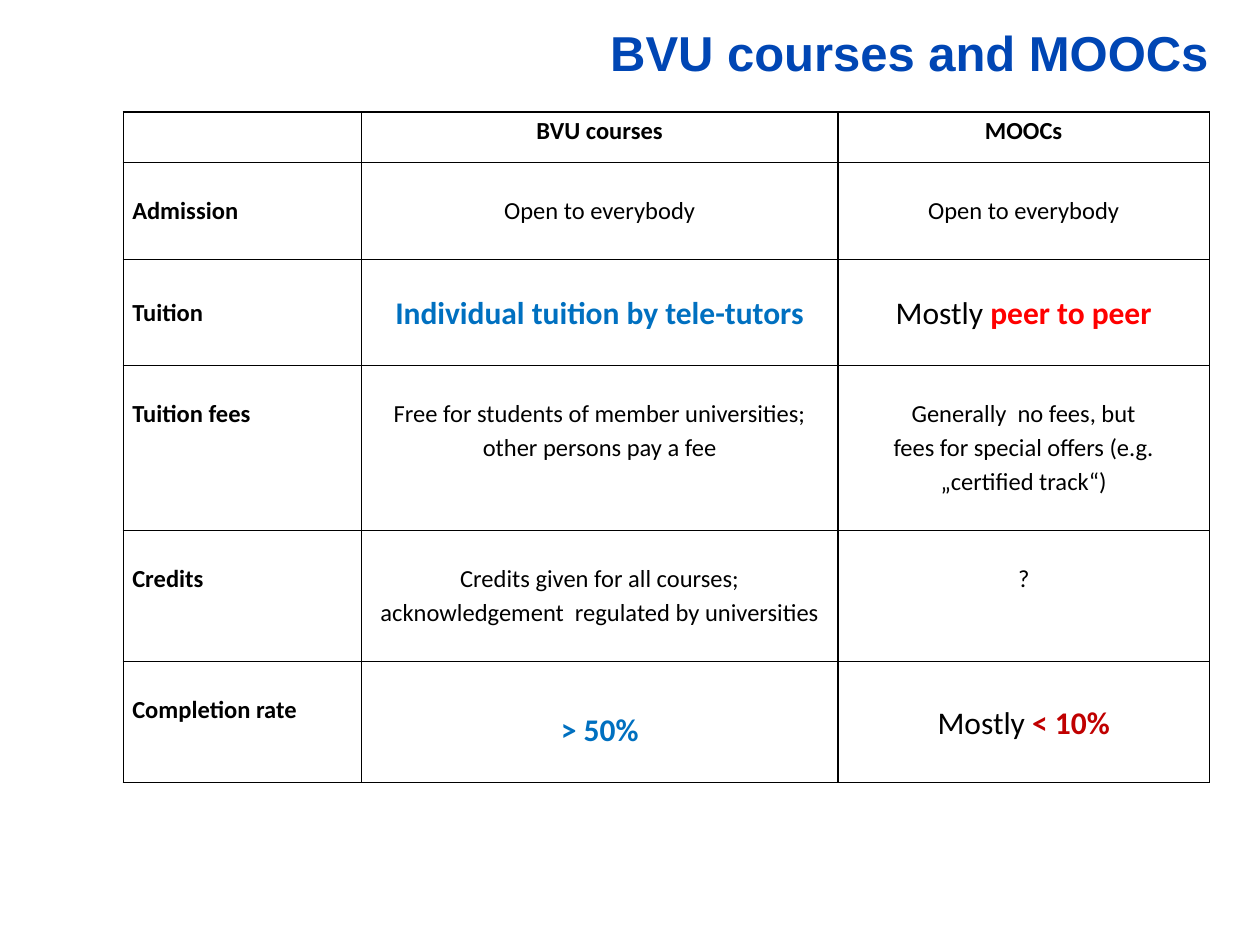
"""Build a slide with a table comparing BVU courses and MOOCs."""
from dataclasses import dataclass

import lxml.etree
import pptx
import pptx.dml.color
import pptx.enum.text
import pptx.oxml.ns
import pptx.util

Inches, Pt = pptx.util.Inches, pptx.util.Pt
PP_ALIGN = pptx.enum.text.PP_ALIGN
MSO_ANCHOR = pptx.enum.text.MSO_ANCHOR


@dataclass(frozen=True)
class Theme:
    title_font: str = "Arial"
    body_font: str = "Calibri"
    title: str = "0046B4"
    text: str = "000000"
    blue: str = "0070C0"
    red: str = "FF0000"
    dark_red: str = "C00000"
    title_size: int = 28
    body_size: int = 14
    large_size: int = 18
    border: int = 1


T = Theme()


def style(font, name, size, color, bold):
    font.name, font.size, font.bold = name, Pt(size), bold
    font.color.rgb = pptx.dml.color.RGBColor.from_string(color)


def add_borders(cell):
    tcPr = cell._tc.get_or_add_tcPr()
    qn = pptx.oxml.ns.qn
    for i, side in enumerate(("lnL", "lnR", "lnT", "lnB")):
        ln = lxml.etree.Element(qn(f"a:{side}"), w=str(Pt(T.border)))
        fill = lxml.etree.SubElement(ln, qn("a:solidFill"))
        lxml.etree.SubElement(fill, qn("a:srgbClr"), val=T.text)
        tcPr.insert(i, ln)


prs = pptx.Presentation()
prs.slide_width, prs.slide_height = Inches(10), Inches(7.5)
s = prs.slides.add_slide(prs.slide_layouts[5])

title = s.shapes.title
title.left, title.top = Inches(2.55), Inches(0.13)
title.width, title.height = Inches(7.25), Inches(0.57)
tf = title.text_frame
tf.text = "BVU courses and MOOCs"
tf.word_wrap = True
tf.vertical_anchor = MSO_ANCHOR.MIDDLE
tf.margin_right = Inches(0.21)
p = tf.paragraphs[0]
p.alignment = PP_ALIGN.RIGHT
style(p.font, T.title_font, T.title_size, T.title, True)

col_widths = [1.89, 3.78, 2.95]
row_heights = [0.4, 0.77, 0.84, 1.31, 1.04, 0.96]
body, large = T.body_size, T.large_size
rows = [
    ["", "BVU courses", "MOOCs"],
    ["Admission", "Open to everybody", "Open to everybody"],
    ["Tuition", [("Individual tuition by tele-tutors", T.blue, True)],
     [("Mostly ", T.text, False), ("peer to peer", T.red, True)]],
    ["Tuition fees",
     "Free for students of member universities;\nother persons pay a fee",
     "Generally  no fees, but\nfees for special offers (e.g. „certified track“)"],
    ["Credits",
     "Credits given for all courses; acknowledgement  regulated by universities", "?"],
    ["Completion rate", [("> 50%", T.blue, True)],
     [("Mostly", T.text, False), (" < 10%", T.dark_red, True)]],
]
top_margins = {(2, 0): 0.27, (5, 1): 0.35, (5, 2): 0.3}

table = s.shapes.add_table(
    len(rows), len(col_widths), Inches(0.98), Inches(0.89),
    Inches(sum(col_widths)), Inches(sum(row_heights))).table
table.first_row = table.horz_banding = False
for column, width in zip(table.columns, col_widths):
    column.width = Inches(width)

for i, (row, height) in enumerate(zip(rows, row_heights)):
    table.rows[i].height = Inches(height)
    for j, content in enumerate(row):
        cell = table.cell(i, j)
        cell.fill.background()
        add_borders(cell)
        cell.vertical_anchor = MSO_ANCHOR.TOP
        cell.margin_left = cell.margin_right = Inches(0.07)
        cell.margin_top = Inches(top_margins.get((i, j), 0.23 if i else 0))
        cell.margin_bottom = 0
        tf = cell.text_frame
        if isinstance(content, str):
            tf.text = content
            for p in tf.paragraphs:
                style(p.font, T.body_font, body, T.text, i == 0 or j == 0)
        else:
            for text, color, bold in content:
                r = tf.paragraphs[0].add_run()
                r.text = text
                style(r.font, T.body_font, large, color, bold)
        for p in tf.paragraphs:
            p.line_spacing = 1.15
            p.alignment = PP_ALIGN.CENTER if j else PP_ALIGN.LEFT

prs.save("out.pptx")
